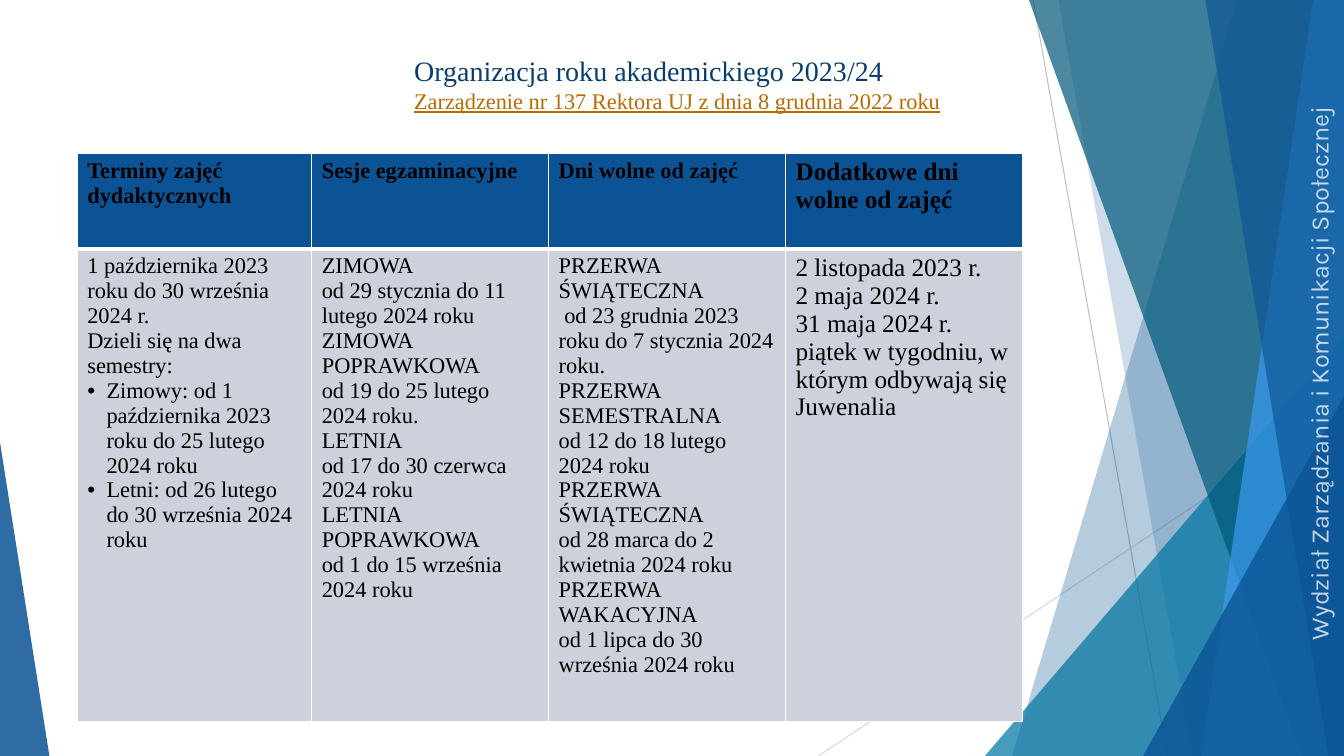
import lxml.etree
import pptx
import pptx.dml.color
import pptx.enum.shapes
import pptx.enum.text
import pptx.oxml.ns
import pptx.util

Pt = pptx.util.Pt
qn = pptx.oxml.ns.qn

WIDTH, HEIGHT = 960, 540
SERIF, SANS = "Times New Roman", "Karla"
COLORS = {
    "navy": "0B5394", "teal": "0075A2", "deep_teal": "00587A", "sky": "3B9AF0",
    "gray": "BFBFBF", "light_gray": "D9D9D9", "title": "083E6F", "link": "B76C00",
    "cell": "CCD1DC", "black": "000000", "white": "FFFFFF",
}

HEADERS = [
    "Terminy zajęć dydaktycznych",
    "Sesje egzaminacyjne",
    "Dni wolne od zajęć",
    "Dodatkowe dni wolne od zajęć",
]
BODIES = [
    [
        "1 października 2023 roku do 30 września 2024 r. \nDzieli się na dwa semestry:",
        "• Zimowy: od 1 października 2023 roku do 25 lutego 2024 roku",
        "• Letni: od 26 lutego do 30 września 2024 roku",
    ],
    [
        "ZIMOWA",
        "od 29 stycznia do 11 lutego 2024 roku",
        "ZIMOWA POPRAWKOWA",
        "od 19 do 25 lutego 2024 roku.",
        "LETNIA",
        "od 17 do 30 czerwca 2024 roku",
        "LETNIA POPRAWKOWA",
        "od 1 do 15 września 2024 roku",
    ],
    [
        "PRZERWA ŚWIĄTECZNA",
        " od 23 grudnia 2023 roku do 7 stycznia 2024 roku.",
        "PRZERWA SEMESTRALNA",
        "od 12 do 18 lutego 2024 roku",
        "PRZERWA ŚWIĄTECZNA",
        "od 28 marca do 2 kwietnia 2024 roku",
        "PRZERWA WAKACYJNA",
        "od 1 lipca do 30 września 2024 roku",
    ],
    [
        "2 listopada 2023 r.",
        "2 maja 2024 r.",
        "31 maja 2024 r.",
        "piątek w tygodniu, w którym odbywają się Juwenalia",
    ],
]
COLUMN_SIZES = [16, 16, 16, 18]


def rgb(name):
    return pptx.dml.color.RGBColor.from_string(COLORS[name])


def set_opacity(fill_parent, percent):
    """Add an alpha value to the first solid colour below an element."""
    color = next(fill_parent.iter(qn("a:srgbClr")))
    lxml.etree.SubElement(color, qn("a:alpha"), val=str(percent * 1000))


class SlideBuilder:
    def __init__(self, slide):
        self.slide = slide
        self.shapes = slide.shapes

    def line(self, start, end, color):
        connector = self.shapes.add_connector(
            pptx.enum.shapes.MSO_CONNECTOR.STRAIGHT, *map(Pt, start + end))
        connector.line.color.rgb = rgb(color)
        connector.line.width = Pt(0.75)
        lxml.etree.SubElement(connector._element.spPr, qn("a:effectLst"))

    def paint(self, shape, color, opacity):
        shape.shadow.inherit = False
        shape.fill.solid()
        shape.fill.fore_color.rgb = rgb(color)
        set_opacity(shape._element.spPr, opacity)
        shape.line.fill.background()

    def band(self, top_left, bottom_left, color, opacity):
        """Full-height band reaching the right edge, with a slanted left side."""
        builder = self.shapes.build_freeform(top_left, 0, scale=Pt(1))
        builder.add_line_segments([(WIDTH, 0), (WIDTH, HEIGHT), (bottom_left, HEIGHT)])
        self.paint(builder.convert_to_shape(), color, opacity)

    def corner(self, left, top, width, apex, color, opacity):
        """Triangle standing on the slide's bottom edge."""
        shape = self.shapes.add_shape(
            pptx.enum.shapes.MSO_SHAPE.ISOSCELES_TRIANGLE,
            Pt(left), Pt(top), Pt(width), Pt(HEIGHT - top))
        shape.adjustments[0] = apex
        self.paint(shape, color, opacity)

    def run(self, paragraph, text, size, color, font=SERIF, bold=False, underline=False):
        run = paragraph.add_run()
        run.text = text
        run.font.name, run.font.size = font, Pt(size)
        run.font.bold, run.font.underline = bold, underline
        run.font.color.rgb = rgb(color)
        return run

    def text_box(self, left, top, width, height):
        box = self.shapes.add_textbox(Pt(left), Pt(top), Pt(width), Pt(height))
        box.text_frame.word_wrap = True
        return box.text_frame

    def title(self, heading, source):
        paragraph = self.text_box(288.7, 34.6, 399, 85.7).paragraphs[0]
        self.run(paragraph, heading, 20, "title")
        paragraph.add_line_break()
        self.run(paragraph, source, 16, "link", underline=True)

    def side_label(self, text):
        frame = self.text_box(923.8, 55.4, 36, 409)
        frame.vertical_anchor = pptx.enum.text.MSO_ANCHOR.MIDDLE
        frame._txBody.bodyPr.set("vert", "vert270")
        run = self.run(frame.paragraphs[0], text, 18, "white", font=SANS)
        set_opacity(run._r, 75)

    def bullet(self, paragraph):
        properties = paragraph._p.get_or_add_pPr()
        properties.set("marL", str(Pt(13.7)))
        properties.set("indent", str(-Pt(13.7)))
        lxml.etree.SubElement(properties, qn("a:buFont"), typeface="Arial")
        lxml.etree.SubElement(properties, qn("a:buChar"), char="•")

    def borders(self, cell, top, bottom):
        properties = cell._tc.get_or_add_tcPr()
        sides = {"L": 1, "R": 1, "T": top, "B": bottom}
        for index, (side, width) in enumerate(sides.items()):
            border = lxml.etree.Element(qn(f"a:ln{side}"), w=str(Pt(width)))
            fill = lxml.etree.SubElement(border, qn("a:solidFill"))
            lxml.etree.SubElement(fill, qn("a:srgbClr"), val=COLORS["white"])
            properties.insert(index, border)

    def cell(self, cell, texts, size, fill, bold, top, bottom):
        cell.fill.solid()
        cell.fill.fore_color.rgb = rgb(fill)
        self.borders(cell, top, bottom)
        frame = cell.text_frame
        for index, text in enumerate(texts):
            paragraph = frame.add_paragraph() if index else frame.paragraphs[0]
            if text.startswith("• "):
                self.bullet(paragraph)
                text = text[2:]
            for number, part in enumerate(text.split("\n")):
                if number:
                    paragraph.add_line_break()
                self.run(paragraph, part, size, "black", bold=bold)

    def calendar(self, widths, heights):
        frame = self.shapes.add_table(
            len(heights), len(widths), Pt(55.2), Pt(109.4), Pt(sum(widths)), Pt(sum(heights)))
        table = frame.table
        for row, height in zip(table.rows, heights):
            row.height = Pt(height)
        for index, size in enumerate(COLUMN_SIZES):
            table.columns[index].width = Pt(widths[index])
            self.cell(table.cell(0, index), [HEADERS[index]], size, "navy", True, 1, 3)
            self.cell(table.cell(1, index), BODIES[index], size, "cell", False, 3, 1)


def main():
    presentation = pptx.Presentation()
    presentation.slide_width, presentation.slide_height = Pt(WIDTH), Pt(HEIGHT)
    builder = SlideBuilder(presentation.slides.add_slide(presentation.slide_layouts[6]))

    builder.line((738, 0), (834, HEIGHT), "gray")
    builder.line((WIDTH, 290), (584.6, HEIGHT), "light_gray")
    builder.band(884, 723, "navy", 30)
    builder.band(756, 852, "navy", 20)
    builder.corner(703.5, 240, 256.5, 1, "teal", 72)
    builder.band(735, 929.5, "deep_teal", 70)
    builder.band(938, 858, "sky", 70)
    builder.band(861, 949, "navy", 65)
    builder.corner(816.5, 283, 143.5, 1, "navy", 80)
    builder.corner(0, 316, 35.3, 0, "navy", 85)

    builder.side_label("Wydział Zarządzania i Komunikacji Społecznej")
    builder.title("Organizacja roku akademickiego 2023/24",
                  "Zarządzenie nr 137 Rektora UJ z dnia 8 grudnia 2022 roku")
    builder.calendar([167.5, 169.2, 169.2, 169.2], [68.4, 337.7])
    presentation.save("out.pptx")


if __name__ == "__main__":
    main()
